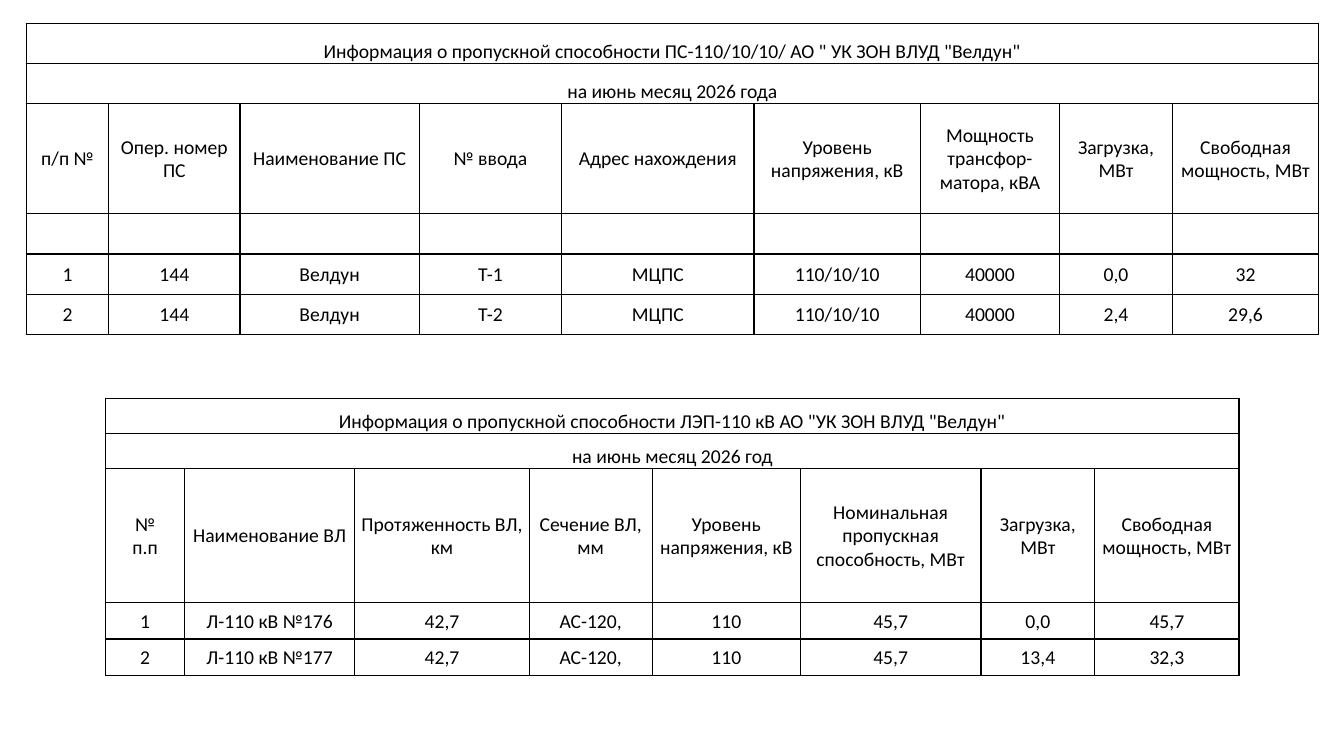
from lxml import etree
from pptx import Presentation
from pptx.dml.color import RGBColor
from pptx.enum.text import MSO_ANCHOR, PP_ALIGN
from pptx.oxml.ns import qn
from pptx.util import Inches, Pt

CENTER = PP_ALIGN.CENTER
MIDDLE = MSO_ANCHOR.MIDDLE
BOTTOM = MSO_ANCHOR.BOTTOM

COLORS = {"ink": "000000", "paper": "FFFFFF"}

# Content: substations, then power lines
STATIONS = {
    "left": 0.26, "top": 0.23,
    "cols": [0.82, 1.3, 1.78, 1.41, 1.91, 1.65, 1.38, 1.12, 1.45],
    "rows": [0.4, 0.4, 1.09, 0.4, 0.4, 0.4],
    "titles": ['Информация о пропускной способности ПС-110/10/10/ АО " УК ЗОН ВЛУД "Велдун"',
               "на июнь месяц 2026 года"],
    "body": [
        ["п/п №", "Опер. номер ПС", "Наименование ПС", "№ ввода", "Адрес нахождения",
         "Уровень напряжения, кВ", "Мощность трансфор-матора, кВА", "Загрузка, МВт",
         "Свободная мощность, МВт"],
        [""] * 9,
        ["1", "144", "Велдун", "Т-1", "МЦПС", "110/10/10", "40000", "0,0", "32"],
        ["2", "144", "Велдун", "Т-2", "МЦПС", "110/10/10", "40000", "2,4", "29,6"],
    ],
}
LINES = {
    "left": 1.05, "top": 3.95,
    "cols": [0.78, 1.69, 1.73, 1.22, 1.47, 1.79, 1.13, 1.43],
    "rows": [0.35, 0.35, 1.33, 0.36, 0.36],
    "titles": ['Информация о пропускной способности ЛЭП-110 кВ АО "УК ЗОН ВЛУД "Велдун"',
               "на июнь месяц 2026 год"],
    "body": [
        ["№\vп.п", "Наименование ВЛ", "Протяженность ВЛ, км", "Сечение ВЛ, мм",
         "Уровень напряжения, кВ", "Номинальная пропускная способность, МВт",
         "Загрузка, МВт", "Свободная мощность, МВт"],
        ["1", "Л-110 кВ №176", "42,7", "АС-120,", "110", "45,7", "0,0", "45,7"],
        ["2", "Л-110 кВ №177", "42,7", "АС-120,", "110", "45,7", "13,4", "32,3"],
    ],
}


def put(cell, text, size=14, font="Calibri", color="ink", anchor=MIDDLE):
    cell.vertical_anchor = anchor
    cell.margin_left = cell.margin_right = cell.margin_top = Inches(0.01)
    cell.margin_bottom = 0
    cell.text = text
    para = cell.text_frame.paragraphs[0]
    para.alignment = CENTER
    for style in [para.font] + [run.font for run in para.runs]:
        style.size = Pt(size)
        style.name = font
        style.color.rgb = RGBColor.from_string(COLORS[color])


def frame(cell, width=1):
    """Draw all four borders, then fill the cell."""
    props = cell._tc.get_or_add_tcPr()
    for side in ("lnL", "lnR", "lnT", "lnB"):
        line = etree.SubElement(props, qn(f"a:{side}"), w=str(Pt(width)))
        fill = etree.SubElement(line, qn("a:solidFill"))
        etree.SubElement(fill, qn("a:srgbClr"), val=COLORS["ink"])
    cell.fill.solid()
    cell.fill.fore_color.rgb = RGBColor.from_string(COLORS["paper"])


def draw(slide, data):
    cols, rows, titles = data["cols"], data["rows"], data["titles"]
    table = slide.shapes.add_table(
        len(rows), len(cols), Inches(data["left"]), Inches(data["top"]),
        Inches(sum(cols)), Inches(sum(rows))).table
    table.first_row = table.horz_banding = False
    for col, width in zip(table.columns, cols):
        col.width = Inches(width)
    for row, height in zip(table.rows, rows):
        row.height = Inches(height)
    for cell in table.iter_cells():
        frame(cell)

    # Title rows span the whole width
    for r, title in enumerate(titles):
        table.cell(r, 0).merge(table.cell(r, len(cols) - 1))
        put(table.cell(r, 0), title, anchor=BOTTOM)

    # Headings and values
    for r, texts in enumerate(data["body"], len(titles)):
        for c, text in enumerate(texts):
            put(table.cell(r, c), text)


def main():
    deck = Presentation()
    deck.slide_width, deck.slide_height = Inches(13.33), Inches(7.5)
    slide = deck.slides.add_slide(deck.slide_layouts[6])
    for data in (STATIONS, LINES):
        draw(slide, data)
    deck.save("out.pptx")


if __name__ == "__main__":
    main()
